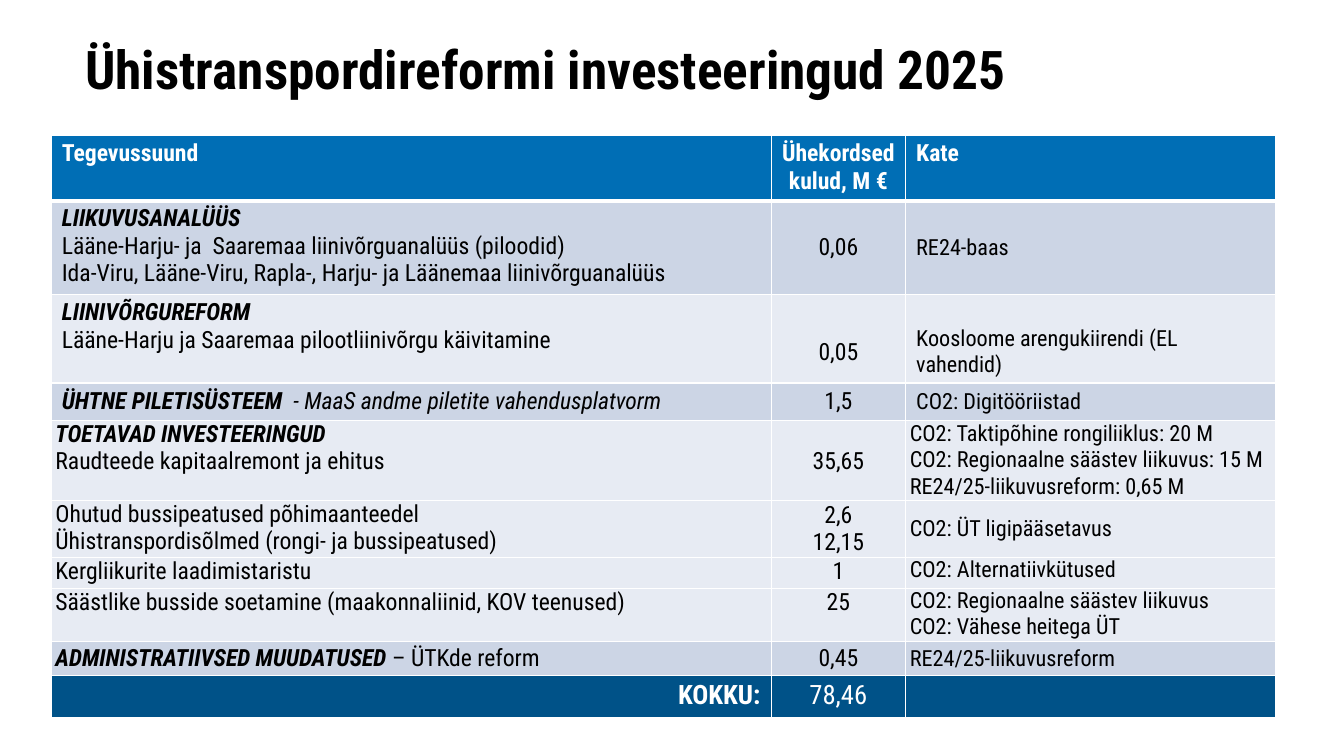
from dataclasses import dataclass

from lxml import etree
from pptx import Presentation
from pptx.dml.color import RGBColor
from pptx.enum import text
from pptx.oxml import ns
from pptx.util import Inches, Pt

FONT = "Roboto Condensed"
COLORS = {"header": "006EB5", "band": "CCD5E5", "pale": "E7EBF3", "total": "005288",
          "white": "FFFFFF", "black": "000000"}
LEFT, CENTER, RIGHT = text.PP_ALIGN.LEFT, text.PP_ALIGN.CENTER, text.PP_ALIGN.RIGHT
TOP, MIDDLE = text.MSO_ANCHOR.TOP, text.MSO_ANCHOR.MIDDLE
COLUMN_WIDTHS = (6.75, 1.26, 3.47)


@dataclass
class Run:
    words: str
    bold: bool = False
    italic: bool = False


@dataclass
class Entry:
    lines: list[list[Run]]
    anchor: text.MSO_ANCHOR = TOP
    align: text.PP_ALIGN = LEFT
    size: float = 16
    drop: float = 0


@dataclass
class Row:
    height: float
    fill: str
    entries: list[Entry]
    tight: bool = False
    ink: str = "black"
    line_above: float = 1
    line_below: float = 1


def plain(*lines: str) -> list[list[Run]]:
    return [[Run(line)] for line in lines]


def bold(words: str) -> list[list[Run]]:
    return [[Run(words, bold=True)]]


def heading(words: str) -> Run:
    return Run(words, bold=True, italic=True)


def activity(*lines: list[Run], anchor: text.MSO_ANCHOR = TOP) -> Entry:
    return Entry(list(lines), anchor)


def cost(*lines: str, anchor: text.MSO_ANCHOR = MIDDLE, size: float = 16, drop: float = 0) -> Entry:
    return Entry(plain(*lines), anchor, CENTER, size, drop)


def cover(*lines: str, anchor: text.MSO_ANCHOR = MIDDLE, drop: float = 0) -> Entry:
    return Entry(plain(*lines), anchor, LEFT, 15, drop)


ROWS = [
    Row(0.61, "header", [Entry(bold("Tegevussuund")),
                         Entry(bold("Ühekordsed kulud, M €"), align=CENTER),
                         Entry(bold("Kate"))], ink="white", line_below=3),
    Row(0.86, "band", [
        activity([heading("LIIKUVUSANALÜÜS")],
                 *plain("Lääne-Harju- ja  Saaremaa liinivõrguanalüüs (piloodid)",
                        "Ida-Viru, Lääne-Viru, Rapla-, Harju- ja Läänemaa liinivõrguanalüüs")),
        cost("0,06"), cover("RE24-baas")], line_above=3),
    Row(0.83, "pale", [
        activity([heading("LIINIVÕRGUREFORM")],
                 *plain("Lääne-Harju ja Saaremaa pilootliinivõrgu käivitamine")),
        cost("0,05", drop=0.26),
        cover("Koosloome arengukiirendi (EL vahendid)", drop=0.24)]),
    Row(0.35, "band", [
        activity([heading("ÜHTNE PILETISÜSTEEM"),
                  Run("  - MaaS andme piletite vahendusplatvorm", italic=True)]),
        cost("1,5", anchor=TOP), cover("CO2: Digitööriistad")]),
    Row(0.73, "pale", [
        activity([heading("TOETAVAD INVESTEERINGUD")],
                 *plain("Raudteede kapitaalremont ja ehitus")),
        cost("35,65", anchor=TOP, drop=0.26),
        cover("CO2: Taktipõhine rongiliiklus: 20 M",
              "CO2: Regionaalne säästev liikuvus: 15 M",
              "RE24/25-liikuvusreform: 0,65 M")], tight=True, line_below=0.25),
    Row(0.51, "pale", [
        activity(*plain("Ohutud bussipeatused põhimaanteedel",
                        "Ühistranspordisõlmed (rongi- ja bussipeatused)")),
        cost("2,6", "12,15"), cover("CO2: ÜT ligipääsetavus")],
        tight=True, line_above=0.25, line_below=0.25),
    Row(0.29, "pale", [
        activity(*plain("Kergliikurite laadimistaristu")),
        cost("1", anchor=TOP), cover("CO2: Alternatiivkütused", anchor=TOP)],
        tight=True, line_above=0.25, line_below=0.25),
    Row(0.48, "pale", [
        activity(*plain("Säästlike busside soetamine (maakonnaliinid, KOV teenused)")),
        cost("25", anchor=TOP),
        cover("CO2: Regionaalne säästev liikuvus", "CO2: Vähese heitega ÜT", anchor=TOP)],
        tight=True, line_above=0.25),
    Row(0.32, "band", [
        activity([heading("ADMINISTRATIIVSED MUUDATUSED "), Run("– ÜTKde reform")],
                 anchor=MIDDLE),
        cost("0,45"), cover("RE24/25-liikuvusreform")], tight=True),
    Row(0.39, "total", [Entry(bold("KOKKU:"), align=RIGHT, size=18),
                        cost("78,46", anchor=TOP, size=18), cover("")], ink="white"),
]


def color(name: str) -> RGBColor:
    return RGBColor.from_string(COLORS[name])


def write_lines(frame, lines: list[list[Run]], size: float, ink: str, align=LEFT) -> None:
    for index, runs in enumerate(lines):
        paragraph = frame.add_paragraph() if index else frame.paragraphs[0]
        paragraph.alignment = align
        font = paragraph.font
        font.name, font.size = FONT, Pt(size)
        font.color.rgb = color(ink)
        if len(runs) == 1:
            font.bold, font.italic = runs[0].bold, runs[0].italic
        for part in runs:
            run = paragraph.add_run()
            run.text = part.words
            if len(runs) > 1:
                run.font.bold, run.font.italic = part.bold, part.italic


def add_borders(cell, row: Row) -> None:
    properties = cell._tc.get_or_add_tcPr()
    widths = {"lnL": 1, "lnR": 1, "lnT": row.line_above, "lnB": row.line_below}
    for side, width in widths.items():
        line = etree.SubElement(properties, ns.qn(f"a:{side}"), w=str(int(Pt(width))))
        fill = etree.SubElement(line, ns.qn("a:solidFill"))
        etree.SubElement(fill, ns.qn("a:srgbClr"), val=COLORS["white"])


def fill_cell(cell, entry: Entry, row: Row) -> None:
    add_borders(cell, row)
    cell.fill.solid()
    cell.fill.fore_color.rgb = color(row.fill)
    side, edge = (0.04, 0) if row.tight else (0.1, 0.04)
    cell.margin_left = cell.margin_right = Inches(side)
    cell.margin_top, cell.margin_bottom = Inches(edge + entry.drop), Inches(edge)
    cell.vertical_anchor = entry.anchor
    write_lines(cell.text_frame, entry.lines, entry.size, row.ink, entry.align)


def add_title(slide) -> None:
    frame = slide.shapes.add_textbox(Inches(0.7), Inches(0.36), Inches(11.09), Inches(0.84)).text_frame
    frame.word_wrap = True
    frame.margin_top = Inches(0.06)
    write_lines(frame, bold("Ühistranspordireformi investeeringud 2025"), 36, "black")
    frame.paragraphs[0].line_spacing = 0.88


def add_investments(slide) -> None:
    table = slide.shapes.add_table(
        len(ROWS), len(COLUMN_WIDTHS), Inches(0.48), Inches(1.27),
        Inches(sum(COLUMN_WIDTHS)), Inches(sum(row.height for row in ROWS))).table
    table.first_row = table.horz_banding = False
    for column, width in zip(table.columns, COLUMN_WIDTHS):
        column.width = Inches(width)
    for row_index, row in enumerate(ROWS):
        table.rows[row_index].height = Inches(row.height)
        for column_index, entry in enumerate(row.entries):
            fill_cell(table.cell(row_index, column_index), entry, row)


def main() -> None:
    """Build the slide of public transport reform investments for 2025."""
    presentation = Presentation()
    presentation.slide_width, presentation.slide_height = Inches(12.6), Inches(7.09)
    slide = presentation.slides.add_slide(presentation.slide_layouts[6])
    add_title(slide)
    add_investments(slide)
    presentation.save("out.pptx")


if __name__ == "__main__":
    main()
